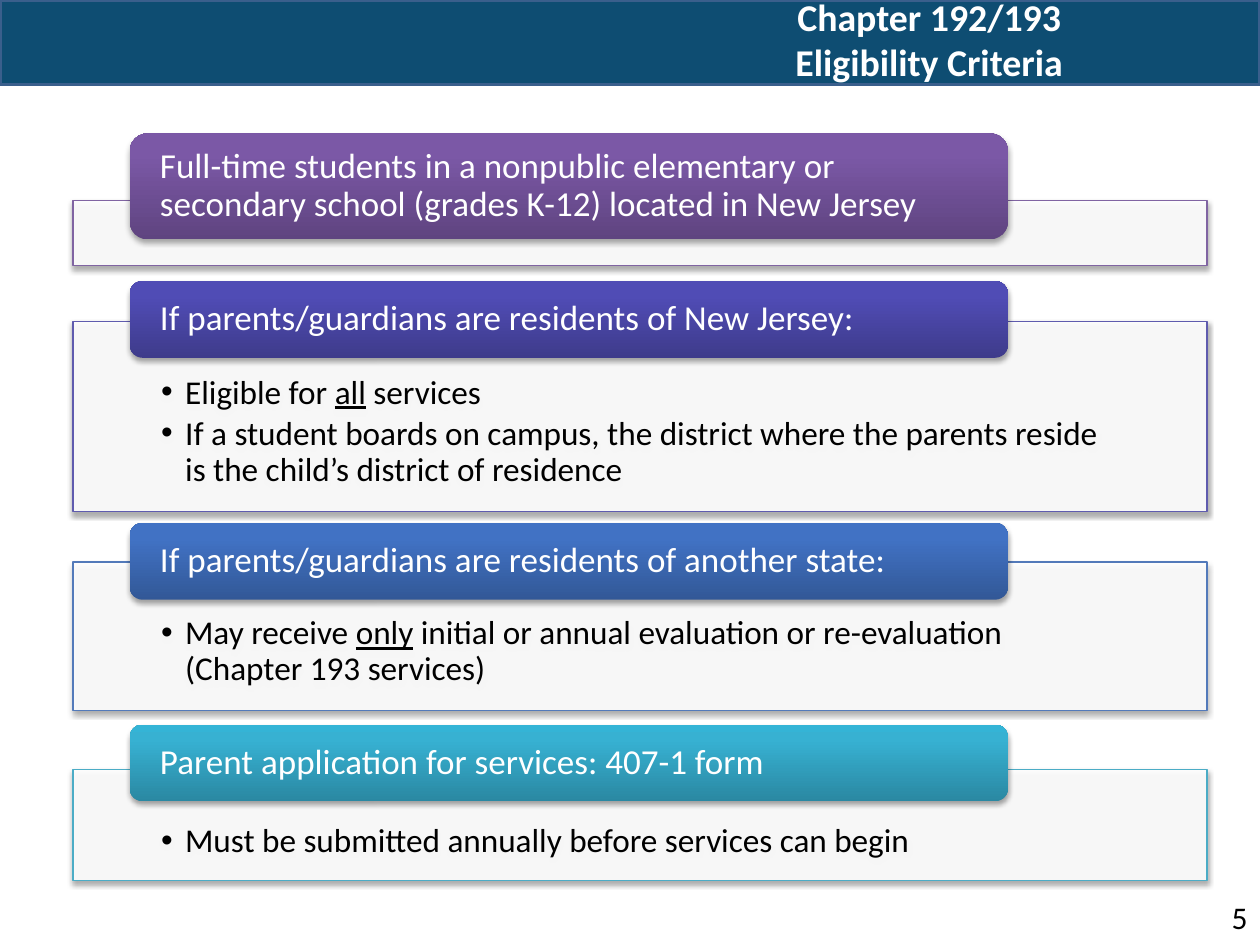
import dataclasses

import pptx
import pptx.dml.color
import pptx.enum.shapes
import pptx.enum.text
import pptx.oxml
import pptx.oxml.ns
import pptx.util
from pptx.util import Inches

SHAPES = pptx.enum.shapes.MSO_SHAPE
ALIGN = pptx.enum.text.PP_ALIGN
ANCHOR = pptx.enum.text.MSO_ANCHOR
QN = pptx.oxml.ns.qn
NAMESPACE = 'xmlns:a="http://schemas.openxmlformats.org/drawingml/2006/main"'


@dataclasses.dataclass(frozen=True)
class Theme:
    font: str = "Calibri"
    bar: str = "0E4D72"
    bar_line: str = "3A5F8C"
    light: str = "FFFFFF"
    dark: str = "000000"
    title_size: float = 21.6
    heading_size: float = 20
    bullet_size: float = 19
    number_size: float = 18


@dataclasses.dataclass(frozen=True)
class Section:
    heading: str
    bullets: tuple
    panel_top: float
    panel_height: float
    tab_top: float
    tab_height: float
    line: str
    gradient: tuple


THEME = Theme()
PANEL_LEFT, PANEL_WIDTH = 0.58, 9
TAB_LEFT, TAB_WIDTH = 1.03, 6.97
CORNER_INSET = 0.1667 * 0.29

SECTIONS = (
    Section("Full-time students in a nonpublic elementary or secondary school "
            "(grades K-12) located in New Jersey", (),
            1.59, 0.52, 1.06, 0.84, "8064A2", ("5F4480", "7B58A6", "7C57A8")),
    Section("If parents/guardians are residents of New Jersey:",
            (("Eligible for ", "all", " services"),
             ("If a student boards on campus, the district where the parents "
              "reside is the child’s district of residence",)),
            2.55, 1.51, 2.23, 0.61, "5F5BAE", ("3E3B8B", "504CB5", "4F4BB8")),
    Section("If parents/guardians are residents of another state:",
            (("May receive ", "only", " initial or annual evaluation or "
              "re-evaluation (Chapter 193 services)"),),
            4.46, 1.18, 4.15, 0.61, "537ABA", ("325897", "4172C4", "3F72C7")),
    Section("Parent application for services: 407-1 form",
            (("Must be submitted annually before services can begin",),),
            6.11, 0.88, 5.75, 0.61, "4BACC6", ("2A88A2", "37B1D2", "34B4D6")),
)


def rgb(value):
    return pptx.dml.color.RGBColor.from_string(value)


def xml(text):
    return pptx.oxml.parse_xml(text.replace(">", f" {NAMESPACE}>", 1))


def style(font, size, color, bold=False):
    font.name = THEME.font
    font.size = pptx.util.Pt(size)
    font.bold = bold
    font.color.rgb = rgb(color)


def set_frame(frame, anchor, left, top, right, bottom):
    frame.word_wrap = True
    frame.vertical_anchor = anchor
    frame.margin_left, frame.margin_top = Inches(left), Inches(top)
    frame.margin_right, frame.margin_bottom = Inches(right), Inches(bottom)


def add_box(page, kind, box):
    shape = page.shapes.add_shape(kind, *map(Inches, box))
    shape.shadow.inherit = False
    return shape


def add_shadow(shape):
    shape.element.spPr.find(QN("a:effectLst")).append(xml(
        '<a:outerShdw blurRad="39370" dist="22860" dir="5400000" rotWithShape="0">'
        '<a:srgbClr val="000000"><a:alpha val="35000"/></a:srgbClr></a:outerShdw>'))


def add_header(page, box):
    bar = add_box(page, SHAPES.RECTANGLE, box)
    bar.fill.solid()
    bar.fill.fore_color.rgb = rgb(THEME.bar)
    bar.line.color.rgb = rgb(THEME.bar_line)
    bar.line.width = pptx.util.Pt(2)
    title = page.shapes.title
    title.element.addprevious(bar.element)
    left, top, width, height = box
    title.left, title.top = Inches(left + 4.75), Inches(top)
    title.width, title.height = Inches(width - 4.75), Inches(height - 0.05)
    frame = title.text_frame
    frame.text = "Chapter 192/193\vEligibility Criteria"
    frame.auto_size = pptx.enum.text.MSO_AUTO_SIZE.NONE
    set_frame(frame, ANCHOR.MIDDLE, 0.1, 0.05, 0.1, 0.05)
    para = frame.paragraphs[0]
    para.alignment = ALIGN.CENTER
    for span in para.runs:
        style(span.font, THEME.title_size, THEME.light, bold=True)


def add_bullets(frame, bullets):
    set_frame(frame, ANCHOR.TOP, 0.7, 0.43, 0.7, 0.15)
    for index, parts in enumerate(bullets):
        para = frame.paragraphs[0] if index == 0 else frame.add_paragraph()
        para.alignment = ALIGN.LEFT
        para.line_spacing = 0.9
        para.space_after = pptx.util.Pt(0.15 * THEME.bullet_size)
        properties = para._p.get_or_add_pPr()
        properties.set("marL", str(Inches(0.19)))
        properties.set("indent", str(-Inches(0.19)))
        properties.append(xml('<a:buFont typeface="Arial"></a:buFont>'))
        properties.append(xml('<a:buChar char="•"></a:buChar>'))
        for position, text in enumerate(parts):
            span = para.add_run()
            span.text = text
            style(span.font, THEME.bullet_size, THEME.dark)
            if position == 1:
                span.font.underline = True


def add_panel(page, box, section):
    panel = add_box(page, SHAPES.RECTANGLE, box)
    panel.fill.solid()
    panel.fill.fore_color.rgb = rgb(THEME.light)
    color = panel.element.spPr.find(QN("a:solidFill"))[0]
    color.append(xml('<a:alpha val="90000"></a:alpha>'))
    panel.line.color.rgb = rgb(section.line)
    panel.line.width = pptx.util.Pt(0.75)
    add_shadow(panel)
    add_bullets(panel.text_frame, section.bullets)


def add_tab(page, box, section):
    tab = add_box(page, SHAPES.ROUNDED_RECTANGLE, box)
    tab.line.fill.background()
    stops = "".join(
        f'<a:gs pos="{place * 1000}"><a:srgbClr val="{color}"/></a:gs>'
        for place, color in zip((0, 80, 100), section.gradient))
    tab.element.spPr.find(QN("a:prstGeom")).addnext(xml(
        f'<a:gradFill rotWithShape="1"><a:gsLst>{stops}</a:gsLst>'
        '<a:lin ang="16200000" scaled="0"/></a:gradFill>'))
    add_shadow(tab)
    side = 0.24 - CORNER_INSET * box[3]
    frame = tab.text_frame
    frame.text = section.heading
    set_frame(frame, ANCHOR.MIDDLE, side, 0, side, 0)
    para = frame.paragraphs[0]
    para.alignment = ALIGN.LEFT
    para.line_spacing = 0.9
    style(para.runs[0].font, THEME.heading_size, THEME.light)


def add_page_number(page, box):
    frame = page.shapes.add_textbox(*map(Inches, box)).text_frame
    frame.text = "5"
    set_frame(frame, ANCHOR.TOP, 0.1, 0.05, 0.1, 0.05)
    para = frame.paragraphs[0]
    para.alignment = ALIGN.RIGHT
    style(para.runs[0].font, THEME.number_size, THEME.dark)


def main():
    deck = pptx.Presentation()
    deck.slide_width, deck.slide_height = Inches(10), Inches(7.5)
    page = deck.slides.add_slide(deck.slide_layouts[5])
    add_header(page, (0, 0, 10, 0.67))
    for section in SECTIONS:
        add_panel(page, (PANEL_LEFT, section.panel_top, PANEL_WIDTH,
                         section.panel_height), section)
        add_tab(page, (TAB_LEFT, section.tab_top, TAB_WIDTH,
                       section.tab_height), section)
    add_page_number(page, (9.33, 7.08, 0.67, 0.4))
    deck.save("out.pptx")


if __name__ == "__main__":
    main()
